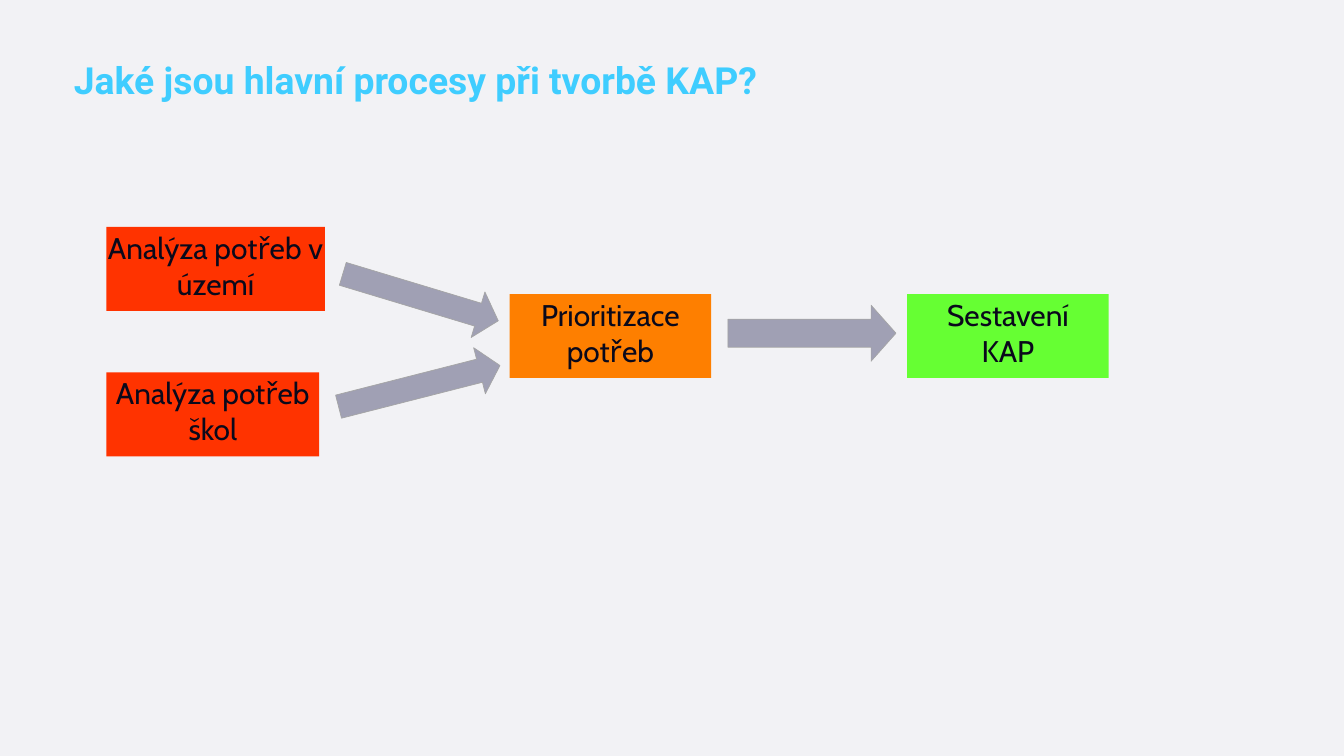
from lxml import etree
from pptx import Presentation
from pptx.dml.color import RGBColor
from pptx.enum.shapes import MSO_SHAPE
from pptx.enum.text import MSO_ANCHOR, PP_ALIGN
from pptx.oxml.ns import qn
from pptx.util import Inches, Pt

RECTANGLE, ARROW = MSO_SHAPE.RECTANGLE, MSO_SHAPE.RIGHT_ARROW
LEFT, CENTER = PP_ALIGN.LEFT, PP_ALIGN.CENTER
TOP, MIDDLE = MSO_ANCHOR.TOP, MSO_ANCHOR.MIDDLE

WIDTH, HEIGHT = Inches(20), Inches(11.25)
COLUMNS, ROWS = 480, 270  # square grid cells
STEP_HEIGHT = 30

BACKGROUND, TITLE, INK = "F2F2F5", "3FCDFF", "0A091B"
RED, ORANGE, GREEN = "FF3300", "FE7F00", "66FF33"
ARROW_FILL, ARROW_LINE = "6A6A8A", "A5A5A5"

# Left column, top row, columns wide, fill, text
STEPS = [
    (38, 81, 78, RED, "Analýza potřeb v území"),
    (38, 133, 76, RED, "Analýza potřeb škol"),
    (182, 105, 72, ORANGE, "Prioritizace potřeb"),
    (324, 105, 72, GREEN, "Sestavení\nKAP"),
]
# Left column, top row, columns wide, rows high, rotation
ARROWS = [
    (121.2, 97.7, 58, 17, 16.8),
    (120, 129.4, 59.5, 17, 345.7),
    (260, 109, 60, 20, 0),
]


def color(hex_string):
    return RGBColor.from_string(hex_string)


def grid(column, row, columns, rows):
    """Turn grid cells into a box in slide units."""
    return (int(WIDTH * column / COLUMNS), int(HEIGHT * row / ROWS),
            int(WIDTH * columns / COLUMNS), int(HEIGHT * rows / ROWS))


def write(shape, text, *, font, size, fill, bold=False, align=LEFT,
          anchor=TOP, spacing=None, insets=(0.1, 0.05, 0.1, 0.05)):
    frame = shape.text_frame
    frame.word_wrap = True
    frame.vertical_anchor = anchor
    (frame.margin_left, frame.margin_top,
     frame.margin_right, frame.margin_bottom) = map(Inches, insets)
    frame.text = text
    for paragraph in frame.paragraphs:
        paragraph.alignment = align
        paragraph.line_spacing = spacing
        for run in paragraph.runs:
            run.font.name = font
            run.font.size = Pt(size)
            run.font.bold = bold
            run.font.color.rgb = color(fill)


def add_filled(slide, kind, box, fill):
    shape = slide.shapes.add_shape(kind, *box)
    shape.shadow.inherit = False
    shape.fill.solid()
    shape.fill.fore_color.rgb = color(fill)
    shape.line.fill.background()
    return shape


def add_title(slide, box):
    title = slide.shapes.add_textbox(*box)
    write(title, "Jaké jsou hlavní procesy při tvorbě KAP?", font="Roboto",
          size=40, fill=TITLE, bold=True, anchor=MIDDLE, spacing=0.9)


def add_step(slide, box, fill, text):
    step = add_filled(slide, RECTANGLE, box, fill)
    write(step, text, font="Cabin", size=32, fill=INK, align=CENTER,
          insets=(0, 0.04, 0, 0.01))


def add_arrow(slide, box, rotation):
    arrow = add_filled(slide, ARROW, box, ARROW_FILL)
    arrow.adjustments[0], arrow.adjustments[1] = 0.5, 0.444
    arrow.rotation = rotation
    arrow.line.color.rgb = color(ARROW_LINE)
    arrow.line.width = Pt(0.75)
    # 60 % opaque fill
    fill_color = arrow.fill._xPr.find(qn("a:solidFill"))[0]
    etree.SubElement(fill_color, qn("a:alpha"), val="60000")


def main():
    presentation = Presentation()
    presentation.slide_width, presentation.slide_height = WIDTH, HEIGHT
    slide = presentation.slides.add_slide(presentation.slide_layouts[6])
    slide.background.fill.solid()
    slide.background.fill.fore_color.rgb = color(BACKGROUND)

    add_title(slide, grid(24, 21, 433, 17))
    # Process steps
    for column, row, columns, fill, text in STEPS:
        add_step(slide, grid(column, row, columns, STEP_HEIGHT), fill, text)
    # Flow between the steps
    for *cells, rotation in ARROWS:
        add_arrow(slide, grid(*cells), rotation)

    presentation.save("out.pptx")


if __name__ == "__main__":
    main()
